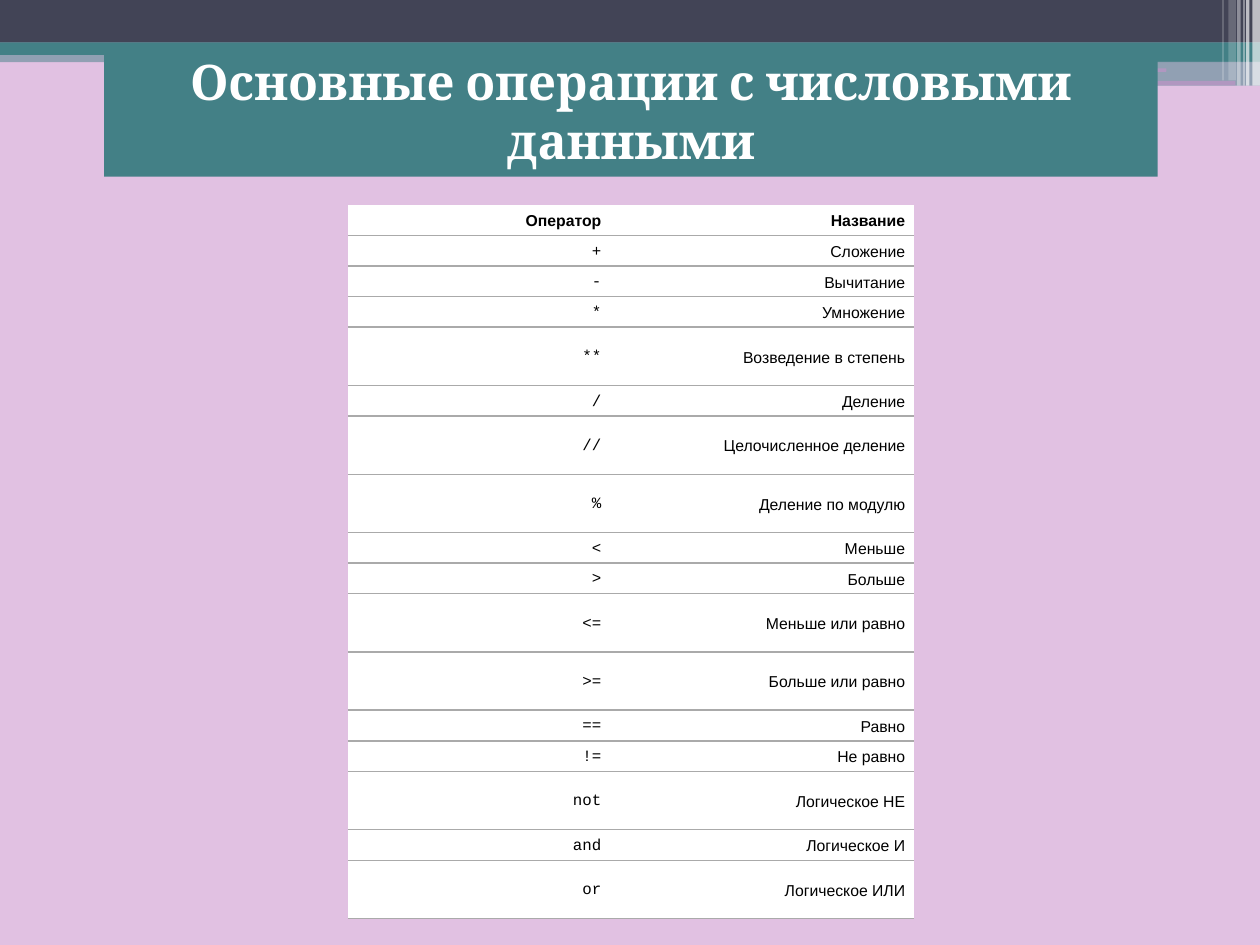
from lxml.etree import SubElement
from pptx import Presentation
from pptx.dml.color import RGBColor
from pptx.enum.shapes import MSO_SHAPE as Shape
from pptx.enum.text import MSO_ANCHOR as Anchor, MSO_AUTO_SIZE as AutoSize, PP_ALIGN as Align
from pptx.oxml.ns import qn
from pptx.util import Pt

BACKGROUND = RGBColor(0xE1, 0xC1, 0xE2)
LILAC = RGBColor(0xC9, 0x91, 0xCB)
TEAL = RGBColor(0x43, 0x80, 0x86)
SLATE = RGBColor(0x42, 0x44, 0x56)
GREY = RGBColor(0xAA, 0xAA, 0xAA)
WHITE = RGBColor(0xFF, 0xFF, 0xFF)
BLACK = RGBColor(0, 0, 0)
NO_GRID = "{2D5ABB26-0587-4C30-8999-92F81FD0307C}"


def write(tf, text, font="Arial", size=9, color=BLACK, bold=False, align=Align.RIGHT, spacing=None):
    p = tf.paragraphs[0]
    p.alignment = align
    p.line_spacing = spacing
    r = p.add_run()
    r.text = text
    r.font.name, r.font.size, r.font.bold = font, Pt(size), bold
    r.font.color.rgb = color


class Deck:
    def __init__(self, width, height):
        self.prs = Presentation()
        self.prs.slide_width, self.prs.slide_height = Pt(width), Pt(height)
        self.s = self.prs.slides.add_slide(self.prs.slide_layouts[6])
        fill = self.s.background.fill
        fill.solid()
        fill.fore_color.rgb = BACKGROUND

    def bar(self, x, y, w, h, color, opacity=100, kind=Shape.RECTANGLE):
        sp = self.s.shapes.add_shape(kind, Pt(x), Pt(y), Pt(w), Pt(h))
        sp.shadow.inherit = False
        sp.line.fill.background()
        sp.fill.solid()
        sp.fill.fore_color.rgb = color
        if opacity < 100:
            clr = sp.element.spPr.find(".//" + qn("a:srgbClr"))
            SubElement(clr, qn("a:alpha"), val=str(opacity * 1000))
        return sp

    def title(self, x, y, w, h, text):
        tf = self.bar(x, y, w, h, TEAL).text_frame
        tf.word_wrap = True
        tf.auto_size = AutoSize.SHAPE_TO_FIT_TEXT
        tf.vertical_anchor = Anchor.TOP
        write(tf, text, font="Cambria", size=28, color=WHITE, bold=True, align=Align.CENTER)

    def cell(self, cell, text, **style):
        cell.margin_left, cell.margin_right = Pt(3.6), Pt(5)
        cell.margin_top = cell.margin_bottom = Pt(0.7)
        cell.vertical_anchor = Anchor.MIDDLE
        write(cell.text_frame, text, spacing=1.15, **style)
        # Rule under the cell; it precedes the fill in the XML
        tc_pr = cell.text_frame._txBody.getparent().get_or_add_tcPr()
        line = SubElement(tc_pr, qn("a:lnB"), w=str(Pt(1)))
        SubElement(SubElement(line, qn("a:solidFill")), qn("a:srgbClr"), val=str(GREY))
        cell.fill.solid()
        cell.fill.fore_color.rgb = WHITE

    def table(self, x, y, widths, heights, rows):
        frame = self.s.shapes.add_table(len(rows), len(widths), Pt(x), Pt(y),
                                        Pt(sum(widths)), Pt(sum(heights)))
        frame.element.find(".//" + qn("a:tableStyleId")).text = NO_GRID
        table = frame.table
        table.horz_banding = False
        for column, width in zip(table.columns, widths):
            column.width = Pt(width)
        for i, (row, height) in enumerate(zip(rows, heights)):
            table.rows[i].height = Pt(height)
            for j, text in enumerate(row):
                font = "Courier New" if i and j == 0 else "Arial"
                self.cell(table.cell(i, j), text, font=font, bold=i == 0)


OPERATORS = [
    ("Оператор", "Название"),
    ("+", "Сложение"),
    ("-", "Вычитание"),
    ("*", "Умножение"),
    ("**", "Возведение в степень"),
    ("/", "Деление"),
    ("//", "Целочисленное деление"),
    ("%", "Деление по модулю"),
    ("<", "Меньше"),
    (">", "Больше"),
    ("<=", "Меньше или равно"),
    (">=", "Больше или равно"),
    ("==", "Равно"),
    ("!=", "Не равно"),
    ("not", "Логическое НЕ"),
    ("and", "Логическое И"),
    ("or", "Логическое ИЛИ"),
]
TALL = {"**", "//", "%", "<=", ">=", "not", "or"}


def main():
    deck = Deck(720, 540)

    # Header bands
    deck.bar(0, 29, 720, 6.5, TEAL, 50)
    deck.bar(0, 0, 720, 24.4, SLATE)
    deck.bar(0, 24.2, 720, 7.2, TEAL)
    deck.bar(426, 28, 294, 7.2, TEAL)
    deck.bar(426, 35, 294, 14, TEAL, 50)
    deck.bar(425.5, 39, 241, 2, LILAC, 56, Shape.ROUNDED_RECTANGLE)
    deck.bar(580, 46.2, 126, 2.6, LILAC, 56, Shape.ROUNDED_RECTANGLE)

    # Light stripes in the top right corner
    for x, w, h, opacity in [(715.7, 4.3, 49, 65), (712, 2, 49, 65), (710.5, 0.7, 49, 60),
                             (707, 2, 49, 40), (702, 4.3, 46, 20), (698.5, 0.7, 46, 30)]:
        deck.bar(x, 0, w, h, WHITE, opacity)

    # Operator table
    heights = [33.3 if sign in TALL else 17.5 for sign, _ in OPERATORS]
    deck.table(198.8, 117, [149.8, 173.6], heights, OPERATORS)

    deck.title(59.5, 26, 602, 75, "Основные операции с числовыми данными")
    deck.prs.save("out.pptx")


if __name__ == "__main__":
    main()
